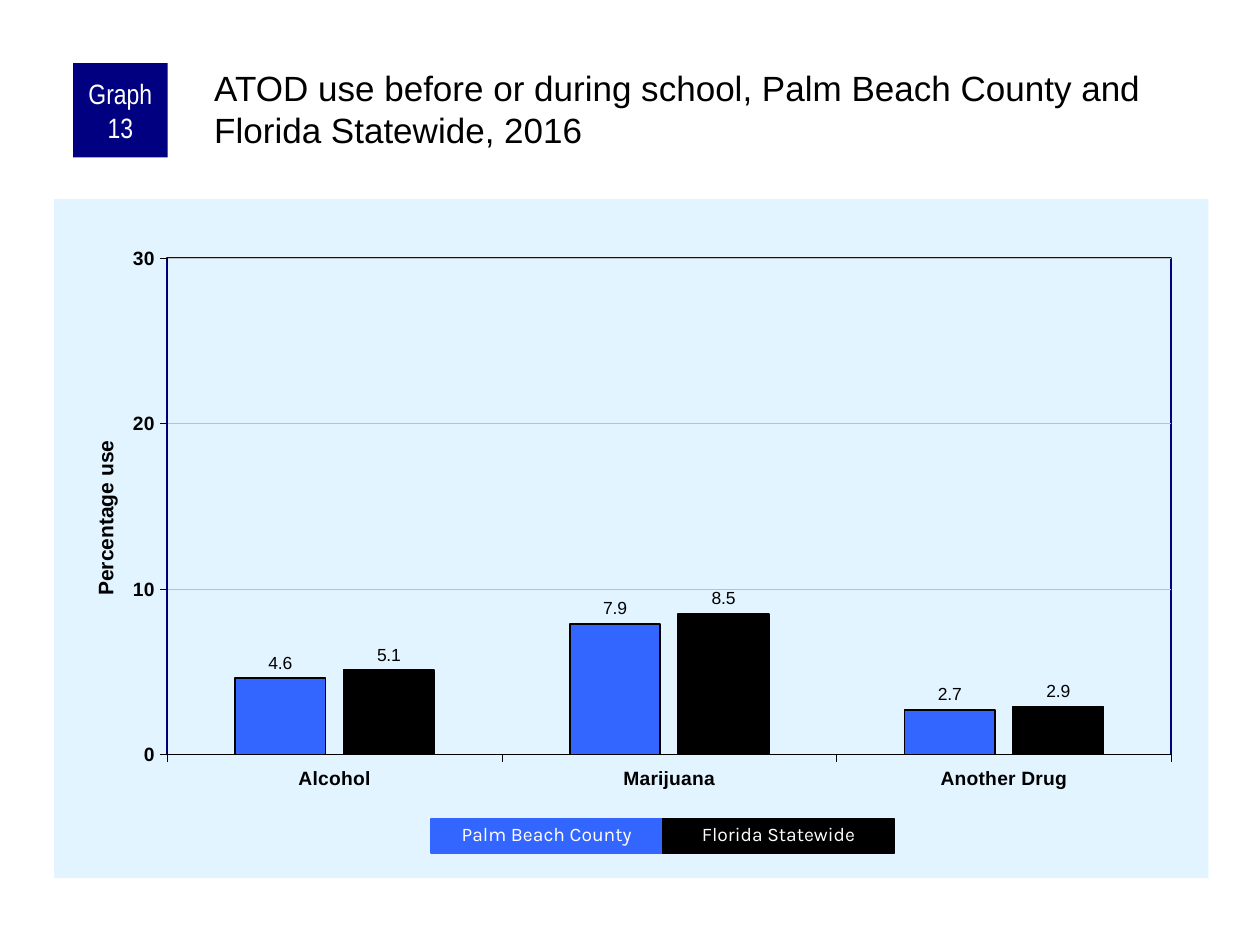
from pptx import Presentation
from pptx.chart.data import CategoryChartData
from pptx.dml.color import RGBColor
from pptx.enum.chart import XL_CHART_TYPE as ChartType, XL_LABEL_POSITION as LabelPosition
from pptx.enum.chart import XL_TICK_MARK as TickMark
from pptx.enum.shapes import MSO_SHAPE as Shape
from pptx.enum.text import MSO_ANCHOR as Anchor, MSO_AUTO_SIZE as AutoSize, PP_ALIGN as Align
from pptx.oxml import parse_xml
from pptx.oxml.ns import nsdecls
from pptx.util import Inches, Pt

BLACK = RGBColor(0x00, 0x00, 0x00)
WHITE = RGBColor(0xFF, 0xFF, 0xFF)
NAVY = RGBColor(0x00, 0x00, 0x80)
BLUE = RGBColor(0x33, 0x66, 0xFF)
PALE_BLUE = RGBColor(0xE1, 0xF4, 0xFF)
GRAY = RGBColor(0xC0, 0xC0, 0xC0)


def style_font(font, name, size, color, bold=False):
    font.name, font.size, font.bold = name, Pt(size), bold
    font.color.rgb = color


def manual_layout(target, **fractions):
    values = "".join(f'<c:{key} val="{value}"/>' for key, value in fractions.items())
    return parse_xml(
        f'<c:layout {nsdecls("c")}><c:manualLayout>{target}'
        f'<c:xMode val="edge"/><c:yMode val="edge"/>{values}</c:manualLayout></c:layout>')


presentation = Presentation()
presentation.slide_width, presentation.slide_height = Inches(10), Inches(7.5)
slide = presentation.slides.add_slide(presentation.slide_layouts[6])

# Chart
series_styles = [
    ("Palm Beach County", BLUE, (4.6, 7.9, 2.7)),
    ("Florida Statewide", BLACK, (5.1, 8.5, 2.9)),
]
chart_data = CategoryChartData(number_format="0.0")
chart_data.categories = ["Alcohol", "Marijuana", "Another Drug"]
for name, color, values in series_styles:
    chart_data.add_series(name, values)
chart = slide.shapes.add_chart(
    ChartType.COLUMN_CLUSTERED, Inches(0.43), Inches(1.58), Inches(9.16), Inches(5.39),
    chart_data).chart
chart.has_legend = False
chart.has_title = False
style_font(chart.font, "Arial", 11.5, BLACK)

# Columns and their labels
plot = chart.plots[0]
plot.gap_width, plot.overlap, plot.vary_by_categories = 150, -20, False
for series, (name, color, values) in zip(plot.series, series_styles):
    series.format.fill.solid()
    series.format.fill.fore_color.rgb = color
    series.format.line.color.rgb = BLACK
    series.format.line.width = Pt(1)
    labels = series.data_labels
    labels.show_value = True
    labels.number_format, labels.number_format_is_linked = "0.0", False
    labels.position = LabelPosition.OUTSIDE_END
    style_font(labels.font, "Arial", 10, BLACK)

# Axes
value_axis = chart.value_axis
for axis in (chart.category_axis, value_axis):
    axis.major_tick_mark, axis.minor_tick_mark = TickMark.OUTSIDE, TickMark.NONE
    axis.format.line.color.rgb = BLACK
    axis.format.line.width = Pt(0.25)
    style_font(axis.tick_labels.font, "Arial", 11, BLACK, True)
value_axis.minimum_scale, value_axis.maximum_scale, value_axis.major_unit = 0, 30, 10
value_axis.tick_labels.number_format = "0"
value_axis.tick_labels.number_format_is_linked = False
value_axis.major_gridlines.format.line.color.rgb = GRAY
value_axis.major_gridlines.format.line.width = Pt(0.25)

axis_title = value_axis.axis_title
title_frame = axis_title.text_frame
run = title_frame.paragraphs[0].add_run()
run.text = "Percentage use"
style_font(run.font, "Arial", 12, BLACK, True)
title_element = axis_title._element
for layout in title_element.findall("{*}layout"):
    title_element.remove(layout)
title_element.find("{*}tx").addnext(manual_layout("", x=0.03, y=0.35))

# Plot area position and border, chart background
plot_area = chart._chartSpace.chart.plotArea
for layout in plot_area.findall("{*}layout"):
    plot_area.remove(layout)
plot_area.insert(0, manual_layout('<c:layoutTarget val="inner"/>', x=0.098, y=0.087, w=0.87, h=0.731))
plot_area.append(parse_xml(
    f'<c:spPr {nsdecls("c", "a")}><a:noFill/><a:ln w="{Pt(1)}"><a:solidFill>'
    f'<a:srgbClr val="{NAVY}"/></a:solidFill></a:ln></c:spPr>'))
chart._chartSpace.chart.addnext(parse_xml(
    f'<c:spPr {nsdecls("c", "a")}><a:solidFill><a:srgbClr val="{PALE_BLUE}"/></a:solidFill>'
    '<a:ln><a:noFill/></a:ln></c:spPr>'))

# Graph number
badge = slide.shapes.add_shape(Shape.RECTANGLE, Inches(0.58), Inches(0.5), Inches(0.75), Inches(0.75))
badge.shadow.inherit = False
badge.fill.solid()
badge.fill.fore_color.rgb = NAVY
badge.line.fill.background()
frame = badge.text_frame
frame.word_wrap = True
frame.vertical_anchor = Anchor.MIDDLE
frame.margin_left = frame.margin_right = Inches(0.05)
frame.margin_top = frame.margin_bottom = 0
paragraph = frame.paragraphs[0]
paragraph.alignment = Align.CENTER
run = paragraph.add_run()
run.text = "Graph 13"
style_font(run.font, "Arial Narrow", 16, WHITE)

# Title
frame = slide.shapes.add_textbox(Inches(1.67), Inches(0.5), Inches(7.92), Inches(0.83)).text_frame
frame.word_wrap = True
frame.margin_left = frame.margin_top = Inches(0.03)
frame.margin_right = frame.margin_bottom = 0
run = frame.paragraphs[0].add_run()
run.text = "ATOD use before or during school, Palm Beach County and Florida Statewide, 2016"
style_font(run.font, "Arial", 20, BLACK)

# Legend boxes
for index, (name, color, values) in enumerate(series_styles):
    box = slide.shapes.add_shape(
        Shape.RECTANGLE, Inches(3.42 + 1.84 * index), Inches(6.5), Inches(1.84), Inches(0.27))
    box.shadow.inherit = False
    box.fill.solid()
    box.fill.fore_color.rgb = color
    box.line.color.rgb = color
    box.line.width = Pt(0.75)
    frame = box.text_frame
    frame.word_wrap = True
    frame.auto_size = AutoSize.SHAPE_TO_FIT_TEXT
    frame.vertical_anchor = Anchor.TOP
    paragraph = frame.paragraphs[0]
    paragraph.alignment = Align.CENTER
    paragraph.line_spacing = 0.9
    run = paragraph.add_run()
    run.text = name
    style_font(run.font, "Karla", 11, WHITE)

presentation.save("out.pptx")
